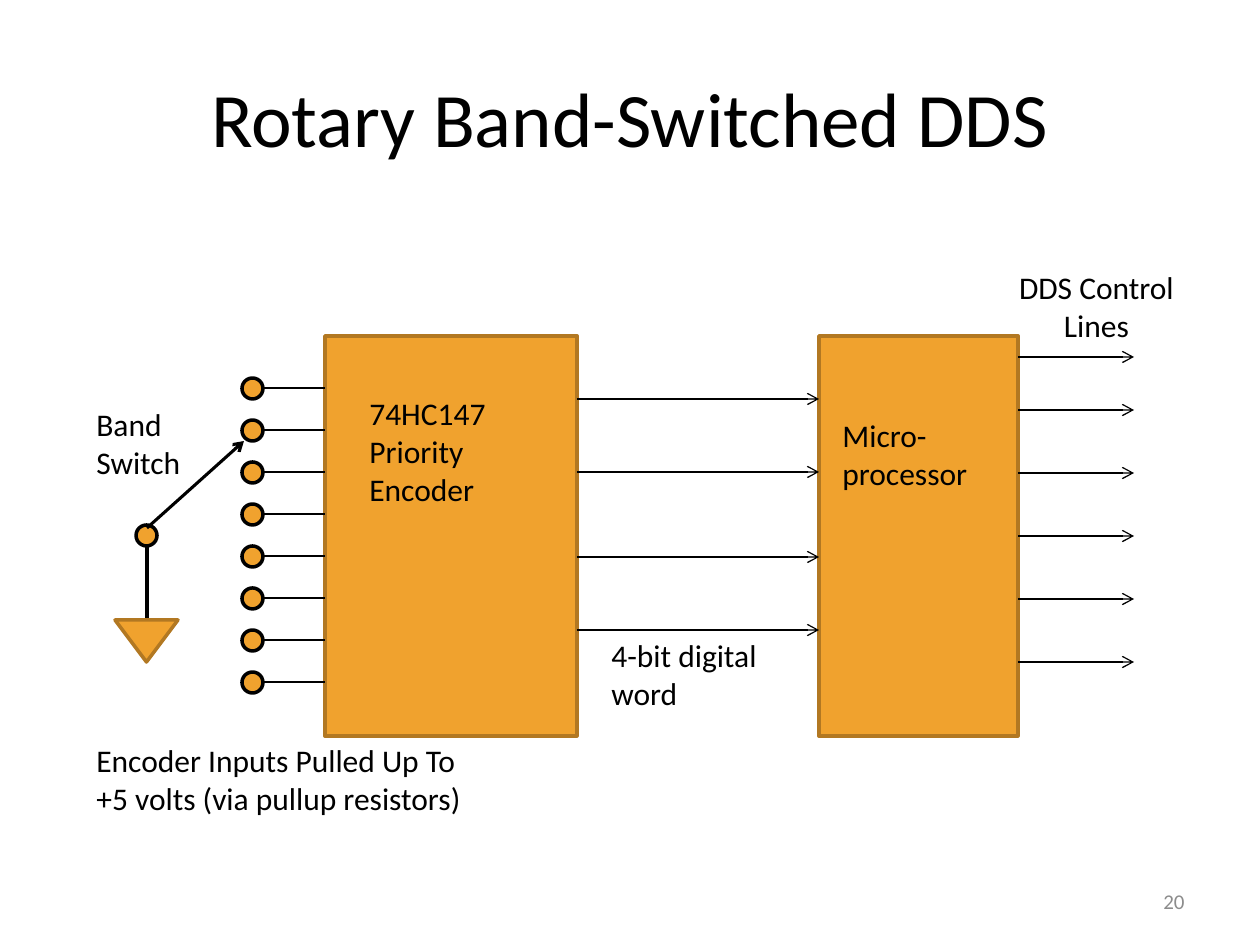
from lxml.etree import SubElement
from pptx import Presentation
from pptx.dml.color import RGBColor
from pptx.enum.shapes import MSO_CONNECTOR, MSO_SHAPE
from pptx.enum.text import MSO_ANCHOR, MSO_AUTO_SIZE, PP_ALIGN
from pptx.oxml.ns import qn
from pptx.util import Emu, Pt

SCALE = 914400 / 126
HUES = {"fill": "F0A22E", "edge": "B27822", "ink": "000000", "page": "8C8C8C"}


def px(n):
    return Emu(round(n * SCALE))


def hue(key):
    return RGBColor.from_string(HUES[key])


def assign(item, vals):
    for key, val in vals.items():
        setattr(item, key, val)


def write(shape, text, size=18, ink="ink", align=PP_ALIGN.LEFT,
          anchor=MSO_ANCHOR.TOP, fit=MSO_AUTO_SIZE.NONE):
    frame = shape.text_frame
    frame.text = text
    assign(frame, {"word_wrap": True, "auto_size": fit, "vertical_anchor": anchor})
    for para in frame.paragraphs:
        para.alignment = align
        for run in para.runs:
            assign(run.font, {"name": "Calibri", "size": Pt(size)})
            run.font.color.rgb = hue(ink)


def place(shape, box):
    assign(shape, dict(zip(("left", "top", "width", "height"), map(px, box))))


def label(slide, box, text, **form):
    form = {"fit": MSO_AUTO_SIZE.SHAPE_TO_FIT_TEXT, **form}
    write(slide.shapes.add_textbox(*map(px, box)), text, **form)


def block(slide, kind, box, edge="edge", turn=0):
    shape = slide.shapes.add_shape(kind, *map(px, box))
    assign(shape, {"rotation": turn})
    shape.shadow.inherit = False
    shape.fill.solid()
    shape.fill.fore_color.rgb = hue("fill")
    shape.line.color.rgb = hue(edge)
    shape.line.width = Pt(2)
    return shape


def wire(slide, start, end, width=0.75, arrow=False):
    line = slide.shapes.add_connector(MSO_CONNECTOR.STRAIGHT, *map(px, start + end))
    line.line.color.rgb = hue("ink")
    line.line.width = Pt(width)
    props = line._element.spPr
    if arrow:
        SubElement(props.find(qn("a:ln")), qn("a:tailEnd"), type="arrow")
    SubElement(props, qn("a:effectLst"))
    return line


def dot(slide, left, top):
    block(slide, MSO_SHAPE.OVAL, (left, top, 21, 21), edge="ink")


def main():
    deck = Presentation()
    assign(deck, {"slide_width": px(1260), "slide_height": px(945)})
    slide = deck.slides.add_slide(deck.slide_layouts[5])
    title = slide.shapes.title
    place(title, (63, 38, 1134, 157))
    write(title, "Rotary Band-Switched DDS", size=44,
          align=PP_ALIGN.CENTER, anchor=MSO_ANCHOR.MIDDLE)
    label(slide, (903, 876, 294, 50), "20", size=12, ink="page",
          align=PP_ALIGN.RIGHT, anchor=MSO_ANCHOR.MIDDLE, fit=MSO_AUTO_SIZE.NONE)

    block(slide, MSO_SHAPE.RECTANGLE, (325, 336, 252, 400))
    micro = block(slide, MSO_SHAPE.RECTANGLE, (819, 336, 199, 400))
    for y in (399, 472, 557, 630):
        wire(slide, (577, y), (819, y), arrow=True)
    for y in (357, 410, 473, 536, 599, 662):
        line = wire(slide, (1018, y), (1134, y), arrow=True)
        if y == 536:
            line.begin_connect(micro, 3)

    for step in range(8):
        top = 378 + 42 * step
        wire(slide, (252, top + 10), (325, top + 10))
        dot(slide, 242, top)
    dot(slide, 136, 525)
    wire(slide, (147, 528), (244, 441), width=1.75, arrow=True)
    wire(slide, (147, 546), (147, 651), width=1.75)
    block(slide, MSO_SHAPE.ISOSCELES_TRIANGLE, (115, 620, 63, 42), turn=180)

    label(slide, (357, 388, 199, 127), "74HC147\nPriority\nEncoder")
    label(slide, (830, 410, 168, 89), "Micro-processor")
    label(slide, (84, 399, 126, 89), "Band\nSwitch")
    label(slide, (599, 630, 189, 89), "4-bit digital word")
    label(slide, (1002, 262, 189, 89), "DDS Control\nLines", align=PP_ALIGN.CENTER)
    label(slide, (84, 735, 441, 89),
          "Encoder Inputs Pulled Up To\v+5 volts (via pullup resistors)")
    deck.save("out.pptx")


if __name__ == "__main__":
    main()
